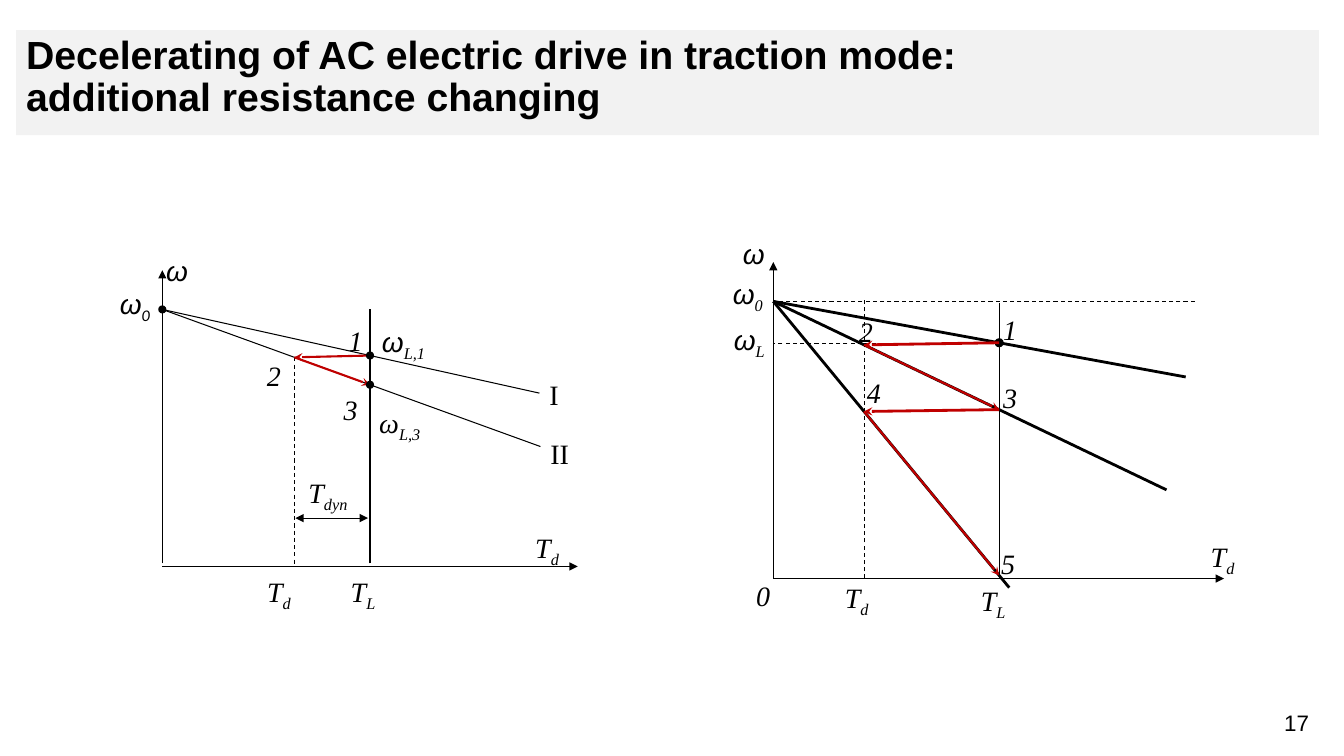
from dataclasses import dataclass
from typing import Any

from lxml.etree import SubElement
from pptx import Presentation
from pptx.dml.color import RGBColor
from pptx.enum.dml import MSO_LINE
from pptx.enum.shapes import MSO_CONNECTOR, MSO_SHAPE
from pptx.enum.text import MSO_ANCHOR, MSO_AUTO_SIZE, PP_ALIGN
from pptx.oxml.ns import qn
from pptx.util import Inches, Pt

BLACK = RGBColor(0x00, 0x00, 0x00)
RED = RGBColor(0xC0, 0x00, 0x00)
LIGHT_GREY = RGBColor(0xF2, 0xF2, 0xF2)
SERIF, SANS = "Times New Roman", "Arial"
STEP = 0.1  # grid step of both diagrams, in inches


def write(paragraph, text, font=SERIF, size=20, bold=False, italic=False, lowered=False):
    """Add one formatted run to a paragraph."""
    run = paragraph.add_run()
    run.text = text
    run.font.name = font
    run.font.size = Pt(size)
    run.font.bold = bold
    run.font.italic = italic
    run.font.color.rgb = BLACK
    if lowered:
        run.font._element.set("baseline", "-25000")


@dataclass
class Diagram:
    """Speed-torque axes: columns run right and rows run up from the origin."""
    slide: Any
    left: float
    bottom: float
    label_rows: float

    def point(self, col, row):
        return Inches(self.left + col * STEP), Inches(self.bottom - row * STEP)

    def line(self, start, end, color=BLACK, width=0.75, dashed=False, head=None, tail=None):
        connector = self.slide.shapes.add_connector(
            MSO_CONNECTOR.STRAIGHT, *self.point(*start), *self.point(*end))
        connector.line.color.rgb = color
        connector.line.width = Pt(width)
        if dashed:
            connector.line.dash_style = MSO_LINE.DASH
        properties = connector._element.spPr
        for tag, kind in (("a:headEnd", head), ("a:tailEnd", tail)):
            if kind:
                SubElement(properties.find(qn("a:ln")), qn(tag), type=kind)
        SubElement(properties, qn("a:effectLst"))

    def dot(self, center, size=0.7):
        col, row = center
        mark = self.slide.shapes.add_shape(
            MSO_SHAPE.OVAL, *self.point(col - size / 2, row + size / 2),
            Inches(size * STEP), Inches(size * STEP))
        mark.shadow.inherit = False
        mark.fill.solid()
        mark.fill.fore_color.rgb = BLACK
        mark.line.color.rgb = BLACK
        mark.line.width = Pt(0.75)

    def label(self, text, index, col, row, cols, rows=None, font=SERIF,
              index_font=SERIF, italic=True, tight=False):
        box = self.slide.shapes.add_textbox(
            *self.point(col, row), Inches(cols * STEP), Inches((rows or self.label_rows) * STEP))
        frame = box.text_frame
        frame.word_wrap = True
        paragraph = frame.paragraphs[0]
        paragraph.line_spacing = 1.15
        paragraph.space_after = Pt(10)
        if tight:
            frame.margin_left = frame.margin_right = frame.margin_top = frame.margin_bottom = 0
            paragraph.alignment = PP_ALIGN.CENTER
        write(paragraph, text, font=font, italic=italic)
        if index:
            write(paragraph, index, font=index_font, italic=italic, lowered=True)


def on_curve(col, start, end):
    """Point of a straight characteristic at the given column."""
    slope = (end[1] - start[1]) / (end[0] - start[0])
    return col, start[1] + slope * (col - start[0])


def add_header(slide, left, top, width, height):
    title = slide.shapes.title
    title.left, title.top = Inches(left), Inches(top)
    title.width, title.height = Inches(width), Inches(height)
    title.fill.solid()
    title.fill.fore_color.rgb = LIGHT_GREY
    frame = title.text_frame
    frame.word_wrap = True
    frame.auto_size = MSO_AUTO_SIZE.NONE
    frame.vertical_anchor = MSO_ANCHOR.TOP
    rows = ("Decelerating of AC electric drive in traction mode:",
            "additional resistance changing")
    for number, text in enumerate(rows):
        paragraph = frame.add_paragraph() if number else frame.paragraphs[0]
        paragraph.alignment = PP_ALIGN.LEFT
        paragraph.line_spacing = 0.9
        paragraph.space_before = Pt(0)
        write(paragraph, text, font=SANS, size=28, bold=True)


def add_page_number(slide, left, top, width, height):
    box = slide.shapes.add_textbox(Inches(left), Inches(top), Inches(width), Inches(height))
    box.text_frame.word_wrap = True
    paragraph = box.text_frame.paragraphs[0]
    paragraph.alignment = PP_ALIGN.CENTER
    write(paragraph, "17", font=SANS, size=16)


def add_single_stage(slide, left, bottom):
    """One resistance step: from characteristic I to II."""
    diagram = Diagram(slide, left, bottom, label_rows=5.8)
    idle, end_1, end_2 = (0, 25.5), (37.4, 17.2), (37.5, 11.9)
    drive, load = 13.1, 20.6
    point_1 = on_curve(load, idle, end_1)
    point_2 = on_curve(drive, idle, end_2)
    point_3 = on_curve(load, idle, end_2)

    # Axes, characteristics and torque levels
    diagram.line((0, 0.3), (0, 29.4), tail="triangle")
    diagram.line((0, 0), (41.2, 0), tail="triangle")
    for end in (end_1, end_2):
        diagram.line(idle, end)
    diagram.line((load, 0.3), (load, 25.5))
    diagram.line(point_2, (drive, 0), dashed=True)
    diagram.line((13.2, 4.8), (20.4, 4.8), width=0.5, head="triangle", tail="triangle")

    # Deceleration path
    for start, end in ((point_1, point_2), (point_2, point_3)):
        diagram.line(start, end, color=RED, width=1.5, tail="stealth")
    for mark in (idle, point_1, point_3):
        diagram.dot(mark)

    # Labels
    diagram.label("ω", "", -0.6, 32, 7.5, font=SANS)
    diagram.label("ω", "0", -5.2, 28.8, 7.5, font=SANS, index_font="Calibri")
    diagram.label("ω", "L,1", 20.8, 25.1, 7.5, font=SANS)
    diagram.label("ω", "L,3", 21.1, 16.5, 4.9, rows=3.7, tight=True)
    diagram.label("I", "", 37.4, 19.7, 5.7, italic=False)
    diagram.label("II", "", 37.5, 13.9, 5.7, italic=False)
    for text, index, col, row, cols in (
            ("1", "", 17.5, 25.1, 3.8), ("2", "", 9.4, 21.6, 5.6), ("3", "", 17, 18.3, 5.6),
            ("T", "dyn", 13.5, 10.1, 7.5), ("T", "d", 36, 4.6, 5.6),
            ("T", "d", 9.4, 0.3, 7.5), ("T", "L", 17.7, 0.3, 7.5)):
        diagram.label(text, index, col, row, cols)


def add_multi_stage(slide, left, bottom):
    """Two resistance steps down to standstill."""
    diagram = Diagram(slide, left, bottom, label_rows=6.3)
    idle = (0, 27.5)
    ends = end_1, end_2, end_3 = (40.9, 20), (39, 8.8), (23.4, -0.9)
    drive, load = 9, 22.4
    point_1 = on_curve(load, idle, end_1)
    point_2 = on_curve(drive, idle, end_2)
    point_3 = on_curve(load, idle, end_2)
    point_4 = on_curve(drive, idle, end_3)
    point_5 = on_curve(load, idle, end_3)

    # Axes, characteristics, torque and speed levels
    diagram.line((0, 0), (0, 31.4), tail="triangle")
    diagram.line((0, 0), (44.7, 0), tail="triangle")
    for end in ends:
        diagram.line(idle, end, width=2)
    diagram.line((load, 27.3), (load, 0))
    diagram.line((drive, 0), (drive, 27.8), dashed=True)
    diagram.line((41.8, 27.5), idle, dashed=True)
    diagram.line((load, 23.3), (0, 23.3), dashed=True)
    diagram.dot(point_1, size=0.8)

    # Deceleration path
    for start, end, width in ((point_1, point_2, 2), (point_2, point_3, 1.5),
                              (point_3, point_4, 2), (point_4, point_5, 1.5)):
        diagram.line(start, end, color=RED, width=width, tail="stealth")

    # Labels
    for index, col, row in (("", -4, 34.9), ("0", -5, 31), ("L", -4.9, 26.5)):
        diagram.label("ω", index, col, row, 8.1, font=SANS)
    for text, index, col, row, cols in (
            ("1", "", 21.8, 27.4, 4.1), ("2", "", 7.5, 27.2, 3.8), ("3", "", 21.8, 20.6, 4),
            ("4", "", 8.3, 21.1, 4.7), ("5", "", 21.6, 4.2, 4.5), ("0", "", -2.7, 1, 4.1),
            ("T", "d", 42.4, 4.9, 6.1), ("T", "d", 6.1, 0.9, 8.1), ("T", "L", 19.6, 0.6, 6.8)):
        diagram.label(text, index, col, row, cols)


def main():
    deck = Presentation()
    deck.slide_width, deck.slide_height = Inches(13.33), Inches(7.5)
    slide = deck.slides.add_slide(deck.slide_layouts[5])
    add_header(slide, 0.16, 0.3, 12.92, 1.04)
    add_single_stage(slide, 1.61, 5.62)
    add_multi_stage(slide, 7.67, 5.74)
    add_page_number(slide, 12.54, 6.99, 0.64, 0.37)
    deck.save("out.pptx")


if __name__ == "__main__":
    main()
